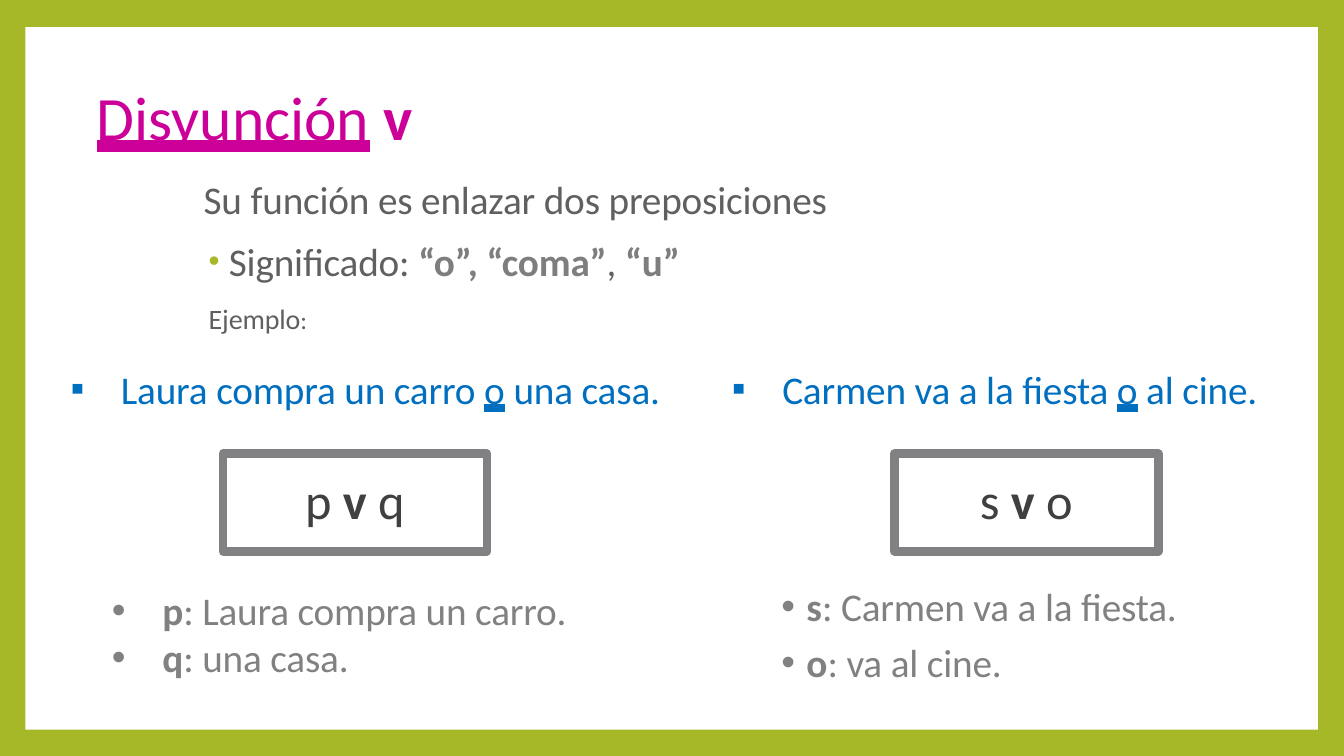
from lxml.etree import SubElement
from pptx import Presentation
from pptx.dml.color import RGBColor
from pptx.enum.shapes import MSO_SHAPE
from pptx.enum.text import MSO_ANCHOR, MSO_AUTO_SIZE, MSO_UNDERLINE, PP_ALIGN
from pptx.oxml.ns import qn
from pptx.util import Inches, Pt

# Content: a run is (text, style), a style joins b (bold) and u (underlined)
TITLE = [("Disyunción", "u"), (" ", ""), ("v", "b")]
FUNCTION = [("Su función es enlazar dos preposiciones", "")]
MEANING = [("Significado: ", ""), ("“o”, “coma”", "b"), (", ", ""), ("“u”", "b")]
EXAMPLES = [
    {
        "sentence": [("Laura compra un carro ", ""), ("o", "u"), (" una casa.", "")],
        "formula": [("p ", ""), ("v ", "b"), ("q", "")],
        "parts": [[("p", "b"), (": Laura compra un carro.", "")],
                  [("q", "b"), (": una casa.", "")]],
        "sentence_x": 5.25, "formula_x": 16.58,
        "parts_at": (8.25, 77.6, 34.73, 12.8), "hang": (0.51, 0.5), "gap": 0,
    },
    {
        "sentence": [("Carmen va a la fiesta ", ""), ("o", "u"), (" al cine.", "")],
        "formula": [("s ", ""), ("v ", "b"), ("o", "")],
        "parts": [[("s", "b"), (": Carmen va a la fiesta.", "")],
                  [("o", "b"), (": va al cine.", "")]],
        "sentence_x": 54.46, "formula_x": 66.54,
        "parts_at": (58.06, 77.07, 30.16, 14), "hang": (0.26, 0.25), "gap": 6,
    },
]
COLORS = {"frame": "A6B727", "panel": "FFFFFF", "title": "CC0099", "body": "606061",
          "strong": "7E7E7E", "example": "006FC0", "gray": "818183", "formula": "404042"}
FONT = "Calibri"
W, H = 13.33, 7.5


def rgb(name):
    return RGBColor.from_string(COLORS[name])


def area(x, y, w, h):
    """Turn percentages of the slide into lengths."""
    return [Inches(share * side / 100) for share, side in zip((x, y, w, h), (W, H, W, H))]


def set_frame(tf, top=0):
    tf.margin_left = tf.margin_right = tf.margin_bottom = 0
    tf.margin_top = Inches(top)
    tf.word_wrap = True
    tf.auto_size = MSO_AUTO_SIZE.NONE
    tf.vertical_anchor = MSO_ANCHOR.TOP


def add_runs(p, runs, size, color, strong=None, spacing=0):
    for text, style in runs:
        r = p.add_run()
        r.text = text
        r.font.name, r.font.size = FONT, Pt(size)
        r.font.bold = "b" in style
        r.font.color.rgb = rgb(strong if strong and "b" in style else color)
        if "u" in style:
            r.font.underline = MSO_UNDERLINE.HEAVY_LINE
        if spacing:
            r.font._element.set("spc", str(spacing))


def indent(p, left, hang=0, bullet=None, color=None, percent=100):
    pPr = p._p.get_or_add_pPr()
    pPr.set("marL", str(Inches(left)))
    pPr.set("indent", str(-Inches(hang)))
    if bullet:
        if color:
            SubElement(SubElement(pPr, qn("a:buClr")), qn("a:srgbClr"), val=COLORS[color])
        SubElement(pPr, qn("a:buSzPct"), val=str(percent * 1000))
        SubElement(pPr, qn("a:buFont"), typeface="Arial")
        SubElement(pPr, qn("a:buChar"), char=bullet)


def add_text(s, at):
    tf = s.shapes.add_textbox(*area(*at)).text_frame
    set_frame(tf)
    return tf


def add_box(s, at, fill, line=None):
    sp = s.shapes.add_shape(MSO_SHAPE.RECTANGLE, *area(*at))
    sp.shadow.inherit = False
    sp.fill.solid()
    sp.fill.fore_color.rgb = rgb(fill)
    if line:
        sp.line.color.rgb = rgb(line)
        sp.line.width = Pt(6)
        SubElement(sp.line._get_or_add_ln(), qn("a:round"))
    else:
        sp.line.fill.background()
    return sp


def main():
    prs = Presentation()
    prs.slide_width, prs.slide_height = Inches(W), Inches(H)
    s = prs.slides.add_slide(prs.slide_layouts[5])

    # Title
    title = s.shapes.title
    title.left, title.top, title.width, title.height = area(7.2, 10.27, 26, 10.13)
    set_frame(title.text_frame, 0.01)
    p = title.text_frame.paragraphs[0]
    p.alignment = PP_ALIGN.LEFT
    add_runs(p, TITLE, 44, "title")

    # Green frame and white panel, behind the title
    for at, fill in (((0, 0, 100, 100), "frame"), ((1.88, 3.6, 96.17, 92.93), "panel")):
        title.element.addprevious(add_box(s, at, fill).element)

    # Function and meaning
    tf = add_text(s, (15.15, 23.2, 60, 22))
    p = tf.paragraphs[0]
    add_runs(p, FUNCTION, 28, "body", spacing=-10)
    p = tf.add_paragraph()
    p.space_before = Pt(10.7)
    indent(p, 0.25, 0.2, "•", "frame", 80)
    add_runs(p, MEANING, 28, "body", "strong", -10)
    p = tf.add_paragraph()
    p.space_before = Pt(12.1)
    indent(p, 0.05)
    add_runs(p, [("Ejemplo", "")], 20, "body", spacing=-10)
    add_runs(p, [(":", "")], 18, "body", spacing=-10)

    # Two examples: sentence, formula and its parts
    for ex in EXAMPLES:
        p = add_text(s, (ex["sentence_x"], 48.27, 45, 6.4)).paragraphs[0]
        indent(p, 0.5, 0.5, "▪")
        add_runs(p, ex["sentence"], 28, "example", spacing=-10)

        tf = add_box(s, (ex["formula_x"], 60, 19.65, 12.93), "panel", "gray").text_frame
        set_frame(tf, 0.15)
        p = tf.paragraphs[0]
        p.alignment = PP_ALIGN.CENTER
        add_runs(p, ex["formula"], 36, "formula")

        tf = add_text(s, ex["parts_at"])
        for i, runs in enumerate(ex["parts"]):
            p = tf.add_paragraph() if i else tf.paragraphs[0]
            p.space_before = Pt(ex["gap"] if i else 0)
            indent(p, *ex["hang"], "•")
            add_runs(p, runs, 28, "gray", spacing=-10)

    prs.save("out.pptx")


if __name__ == "__main__":
    main()
